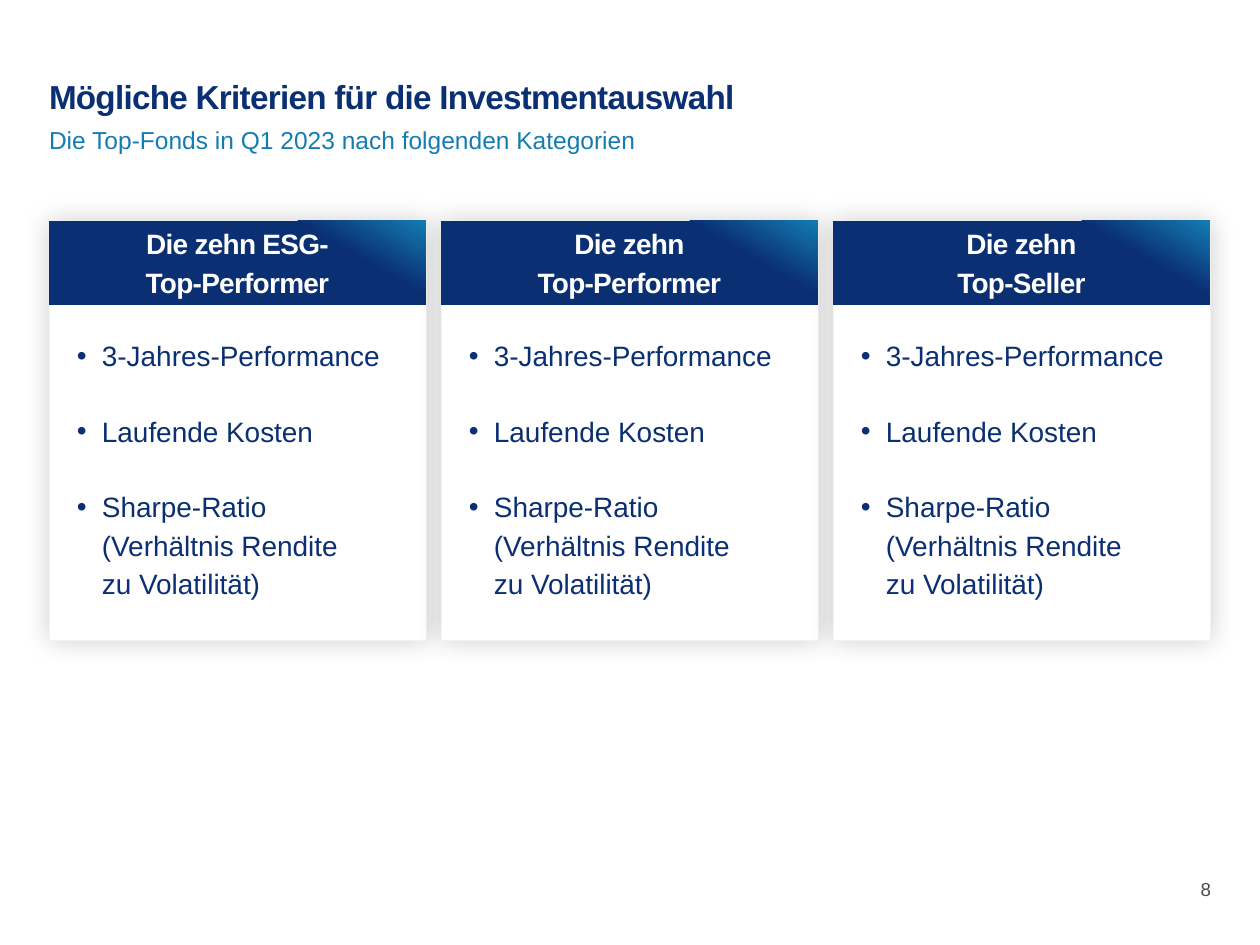
from copy import deepcopy
from dataclasses import dataclass
from typing import Optional

from lxml.etree import SubElement
from pptx import Presentation
from pptx.dml.color import RGBColor
from pptx.enum.shapes import MSO_SHAPE
from pptx.enum.text import MSO_ANCHOR, MSO_AUTO_SIZE, PP_ALIGN
from pptx.oxml.ns import qn
from pptx.util import Emu, Pt

SCALE = 914400 / 126
COLORS = {
    "navy": "0A2F73",
    "blue": "147CB3",
    "white": "FFFFFF",
    "border": "F2F2F2",
    "gray": "4B4B4B",
    "shadow": "000000",
}
LEFT = 49
CARD_TOP, CARD_WIDTH, CARD_HEIGHT, CARD_PITCH = 221, 377, 419, 392
HEADER_HEIGHT, LIST_HEIGHT = 84, 319
CRITERIA = [
    "3-Jahres-Performance",
    "Laufende Kosten",
    "Sharpe-Ratio\n(Verhältnis Rendite\nzu Volatilität)",
]
CARD_TITLES = [
    "Die zehn ESG-\nTop-Performer",
    "Die zehn\nTop-Performer",
    "Die zehn\nTop-Seller",
]


@dataclass
class TextStyle:
    size: float
    color: str
    bold: bool = False
    spacing: int = 0
    line_spacing: float = 1.15
    align: PP_ALIGN = PP_ALIGN.LEFT
    anchor: MSO_ANCHOR = MSO_ANCHOR.TOP
    insets: tuple[int, int, int, int] = (0, 0, 0, 0)
    bullet: Optional[str] = None
    indent: int = 0
    gap: int = 0


TITLE = TextStyle(19, "navy", True, -40, 0.9, insets=(0, 0, 49, 0))
SUBTITLE = TextStyle(14, "blue")
HEADER = TextStyle(16, "white", True, -40, align=PP_ALIGN.CENTER,
                   anchor=MSO_ANCHOR.MIDDLE, insets=(28, 0, 28, 5))
LIST = TextStyle(16, "navy", insets=(28, 28, 28, 28), bullet="•", indent=25, gap=21)
PAGE_NUMBER = TextStyle(10.7, "gray", line_spacing=1.0, align=PP_ALIGN.RIGHT,
                        anchor=MSO_ANCHOR.MIDDLE, insets=(13, 6, 0, 6))


def px(value: int) -> Emu:
    return Emu(round(value * SCALE))


def rgb(name: str) -> RGBColor:
    return RGBColor.from_string(COLORS[name])


def apply(target, values: dict) -> None:
    for name, value in values.items():
        setattr(target, name, value)


def place(shape, left: int, top: int, width: int, height: int) -> None:
    apply(shape, {"left": px(left), "top": px(top),
                  "width": px(width), "height": px(height)})


def set_bullet(para, style: TextStyle) -> None:
    properties = para._p.get_or_add_pPr()
    properties.set("marL", str(px(style.indent)))
    properties.set("indent", str(-px(style.indent)))
    if style.bullet:
        SubElement(properties, qn("a:buFont"), typeface="Arial")
        SubElement(properties, qn("a:buChar"), char=style.bullet)
    else:
        SubElement(properties, qn("a:buNone"))


def write_paragraph(para, text: str, style: TextStyle, space_before: int) -> None:
    set_bullet(para, style)
    apply(para, {"alignment": style.align, "line_spacing": style.line_spacing,
                 "space_before": Pt(space_before), "space_after": Pt(0)})
    for number, line in enumerate(text.split("\n")):
        if number:
            para.add_line_break()
        span = para.add_run()
        span.text = line
        apply(span.font, {"name": "Arial", "size": Pt(style.size), "bold": style.bold})
        span.font.color.rgb = rgb(style.color)
        span_properties = span._r.get_or_add_rPr()
        span_properties.set("spc", str(style.spacing))
        if number:
            span._r.getprevious().append(deepcopy(span_properties))


def write_text(box, texts: list[str], style: TextStyle) -> None:
    frame = box.text_frame
    sides = ("margin_left", "margin_top", "margin_right", "margin_bottom")
    apply(frame, dict(zip(sides, map(px, style.insets))))
    apply(frame, {"word_wrap": True, "vertical_anchor": style.anchor,
                  "auto_size": MSO_AUTO_SIZE.NONE})
    for number, text in enumerate(texts):
        para = frame.add_paragraph() if number else frame.paragraphs[0]
        write_paragraph(para, text, style, style.gap if number else 0)


def add_rectangle(page, left: int, top: int, width: int, height: int):
    box = page.shapes.add_shape(MSO_SHAPE.RECTANGLE, px(left), px(top),
                                px(width), px(height))
    box.shadow.inherit = False
    return box


def add_text_box(page, left: int, top: int, width: int, height: int,
                 texts: list[str], style: TextStyle) -> None:
    box = page.shapes.add_textbox(px(left), px(top), px(width), px(height))
    write_text(box, texts, style)


def add_soft_shadow(box) -> None:
    effects = box._element.spPr.find(qn("a:effectLst"))
    shadow = SubElement(effects, qn("a:outerShdw"), blurRad=str(Pt(15)),
                        dist="0", dir="0", algn="ctr", rotWithShape="0")
    color = SubElement(shadow, qn("a:srgbClr"), val=COLORS["shadow"])
    SubElement(color, qn("a:alpha"), val="20000")


def add_card(page, left: int, title: str) -> None:
    panel = add_rectangle(page, left, CARD_TOP, CARD_WIDTH, CARD_HEIGHT)
    panel.fill.solid()
    panel.fill.fore_color.rgb = rgb("white")
    panel.line.color.rgb = rgb("border")
    panel.line.width = Pt(0.25)
    add_soft_shadow(panel)

    header = add_rectangle(page, left, CARD_TOP, CARD_WIDTH, HEADER_HEIGHT)
    header.line.fill.background()
    header.fill.gradient()
    header.fill.gradient_angle = 60
    for stop, (position, color) in zip(header.fill.gradient_stops,
                                       [(0.75, "navy"), (1.0, "blue")]):
        stop.position = position
        stop.color.rgb = rgb(color)
    write_text(header, [title], HEADER)

    add_text_box(page, left, CARD_TOP + HEADER_HEIGHT + 1, CARD_WIDTH,
                 LIST_HEIGHT, CRITERIA, LIST)


def main() -> None:
    deck = Presentation()
    apply(deck, {"slide_width": px(1260), "slide_height": px(945)})
    page = deck.slides.add_slide(deck.slide_layouts[1])

    title, subtitle = page.placeholders
    place(title, LEFT, 81, 942, 37)
    write_text(title, ["Mögliche Kriterien für die Investmentauswahl"], TITLE)
    place(subtitle, LEFT, 121, 942, 33)
    write_text(subtitle, ["Die Top-Fonds in Q1 2023 nach folgenden Kategorien"], SUBTITLE)

    for number, card_title in enumerate(CARD_TITLES):
        add_card(page, LEFT + number * CARD_PITCH, card_title)
    add_text_box(page, 1099, 864, 112, 50, ["8"], PAGE_NUMBER)
    deck.save("out.pptx")


if __name__ == "__main__":
    main()
